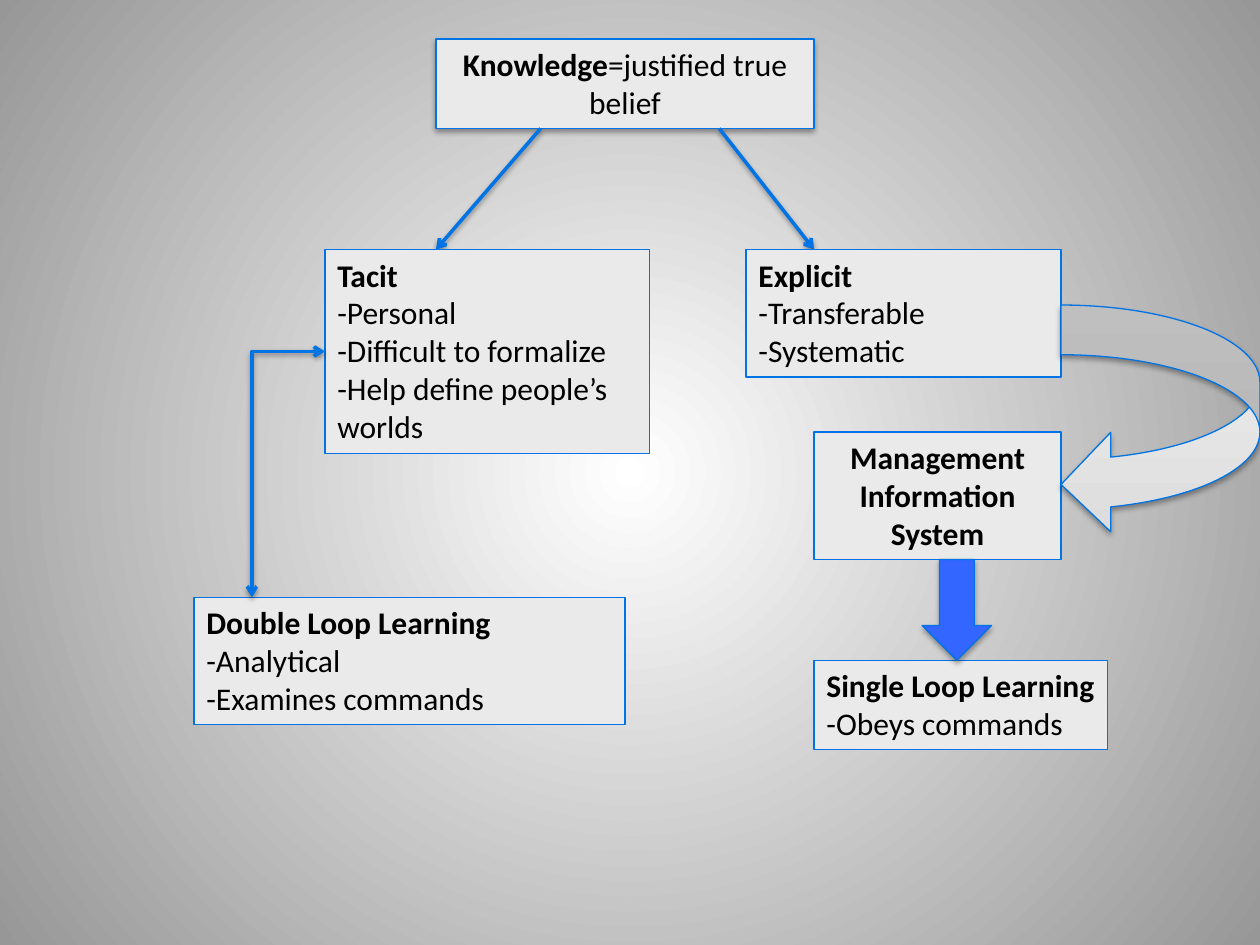
from lxml import etree
from pptx import Presentation
from pptx.dml.color import RGBColor
from pptx.enum.shapes import MSO_CONNECTOR, MSO_SHAPE
from pptx.enum.text import MSO_ANCHOR, MSO_AUTO_SIZE, PP_ALIGN
from pptx.oxml.ns import qn
from pptx.util import Cm, Pt

STRAIGHT, ELBOW = MSO_CONNECTOR.STRAIGHT, MSO_CONNECTOR.ELBOW
RECTANGLE = MSO_SHAPE.RECTANGLE
DOWN_ARROW, CURVED_ARROW = MSO_SHAPE.DOWN_ARROW, MSO_SHAPE.CURVED_LEFT_ARROW
LEFT, CENTER = PP_ALIGN.LEFT, PP_ALIGN.CENTER
LEFT_SIDE = 1

COLORS = {
    "box": "EAEAEA", "line": "0073E5", "pale_line": "D8D8D8", "arrow": "3366FF",
    "text": "000000", "shadow": "000000", "center": "FFFFFF", "edge": "979797",
    "curve_start": "DDDDDD", "curve_end": "EFEFEF",
}
FONT = {"name": "Calibri", "size": Pt(18)}
FRAME = {"word_wrap": True, "auto_size": MSO_AUTO_SIZE.SHAPE_TO_FIT_TEXT,
         "vertical_anchor": MSO_ANCHOR.TOP}


def color(name):
    return RGBColor.from_string(COLORS[name])


def apply(target, values):
    for name, value in values.items():
        setattr(target, name, value)


def add_element(parent, tag, **attributes):
    element = etree.SubElement(parent, qn(tag))
    for name, value in attributes.items():
        element.set(name, str(value))
    return element


def add_shadow(properties, opacity, distance):
    """Put a soft downward shadow on a shape or connector."""
    effects = properties.find(qn("a:effectLst"))
    if effects is None:
        effects = add_element(properties, "a:effectLst")
    shadow = add_element(effects, "a:outerShdw", blurRad=Pt(3.1), dist=Pt(distance),
                         dir=90 * 60000, rotWithShape=0)
    tint = add_element(shadow, "a:srgbClr", val=COLORS["shadow"])
    add_element(tint, "a:alpha", val=opacity * 1000)


def add_figure(slide, kind, box, fill="box", line="line", shadow=False):
    shape = slide.shapes.add_shape(kind, *map(Cm, box))
    shape.shadow.inherit = False
    shape.fill.solid()
    shape.fill.fore_color.rgb = color(fill)
    shape.line.color.rgb = color(line)
    shape.line.width = Pt(0.75)
    if shadow:
        add_shadow(shape._element.spPr, 35, 1.8)
    return shape


def add_text_box(slide, box, paragraphs, alignment=LEFT):
    """Add a box whose paragraphs are pairs of bold and plain text."""
    shape = add_figure(slide, RECTANGLE, box)
    frame = shape.text_frame
    apply(frame, FRAME)
    for index, parts in enumerate(paragraphs):
        paragraph = frame.add_paragraph() if index else frame.paragraphs[0]
        paragraph.alignment = alignment
        for text, bold in zip(parts, (True, False)):
            if text:
                run = paragraph.add_run()
                run.text = text
                apply(run.font, {**FONT, "bold": bold})
                run.font.color.rgb = color("text")
    return shape


def add_arrow(slide, kind, start, end, heads=("a:tailEnd",)):
    connector = slide.shapes.add_connector(kind, *map(Cm, start + end))
    connector.line.color.rgb = color("line")
    connector.line.width = Pt(2)
    properties = connector._element.spPr
    for head in heads:
        add_element(properties.find(qn("a:ln")), head, type="arrow")
    add_shadow(properties, 38, 1.6)
    return connector


def set_background(slide):
    fill = slide.background.fill
    fill.gradient()
    for stop, name, position in zip(fill.gradient_stops, ("center", "edge"), (0, 1)):
        stop.color.rgb = color(name)
        stop.position = position
    gradient = slide._element.cSld.bg.bgPr.find(qn("a:gradFill"))
    gradient.remove(gradient.find(qn("a:lin")))
    path = add_element(gradient, "a:path", path="circle")
    add_element(path, "a:fillToRect", l=50000, t=50000, r=50000, b=50000)


def add_knowledge(slide, left, top, width, height):
    """Add the definition and the two arrows that branch from it."""
    box_height = 1.8
    box = (left, top, width, box_height)
    add_figure(slide, RECTANGLE, box, line="pale_line", shadow=True)
    add_text_box(slide, box, [("Knowledge", "=justified true belief")], CENTER)
    for start, end in ((5.71, width), (2.11, 0)):
        add_arrow(slide, STRAIGHT, (left + start, top + box_height),
                  (left + end, top + height))


def add_tacit(slide, left, top, width, height):
    """Add tacit knowledge and the double loop linked to it."""
    tacit_width, tacit_height, loop_height = 6.55, 4.11, 2.57
    tacit_left = left + width - tacit_width
    loop_top = top + height - loop_height
    tacit = add_text_box(slide, (tacit_left, top, tacit_width, tacit_height), [
        ("Tacit",), ("", "-Personal"), ("", "-Difficult to formalize"),
        ("", "-Help define people’s worlds")])
    add_text_box(slide, (left, loop_top, 8.69, loop_height), [
        ("Double Loop Learning",), ("", "-Analytical"), ("", "-Examines commands")])
    link = add_arrow(slide, ELBOW, (tacit_left, top + tacit_height / 2),
                     (left + 1.17, loop_top), ("a:headEnd", "a:tailEnd"))
    link._element.spPr.find(qn("a:prstGeom")).set("prst", "bentConnector2")
    link.begin_connect(tacit, LEFT_SIDE)


def add_explicit(slide, left, top, width, height):
    """Add explicit knowledge, the information system and the single loop."""
    box_width, box_height, loop_height = 6.35, 2.57, 1.8
    inner_left, system_top = left + 1.37, top + 3.68
    system_bottom = system_top + box_height
    loop_top = top + height - loop_height
    add_text_box(slide, (left, top, box_width, box_height), [
        ("Explicit",), ("", "-Transferable"), ("", "-Systematic")])
    add_text_box(slide, (inner_left, loop_top, 5.92, loop_height), [
        ("Single Loop Learning",), ("", "-Obeys commands")])
    add_text_box(slide, (inner_left, system_top, box_width - 1.37, box_height),
                 [("Management Information System",)], CENTER)
    add_figure(slide, DOWN_ARROW,
               (left + 3.55, system_bottom, 1.4, loop_top - system_bottom),
               fill="arrow", shadow=True)
    curve = add_figure(slide, CURVED_ARROW,
                       (left + box_width, top + 1.12, width - box_width, 4.62),
                       shadow=True)
    curve.fill.gradient()
    curve.fill.gradient_angle = 90
    for stop, name, position in zip(curve.fill.gradient_stops,
                                    ("curve_start", "curve_end"), (0, 1)):
        stop.color.rgb = color(name)
        stop.position = position


def main():
    presentation = Presentation()
    presentation.slide_width, presentation.slide_height = Cm(25.4), Cm(19.05)
    slide = presentation.slides.add_slide(presentation.slide_layouts[6])
    set_background(slide)
    add_knowledge(slide, 8.79, 0.79, 7.62, 4.24)
    add_explicit(slide, 15.04, 5.03, 10.36, 10.08)
    add_tacit(slide, 3.91, 5.03, 9.19, 9.58)
    presentation.save("out.pptx")


if __name__ == "__main__":
    main()
